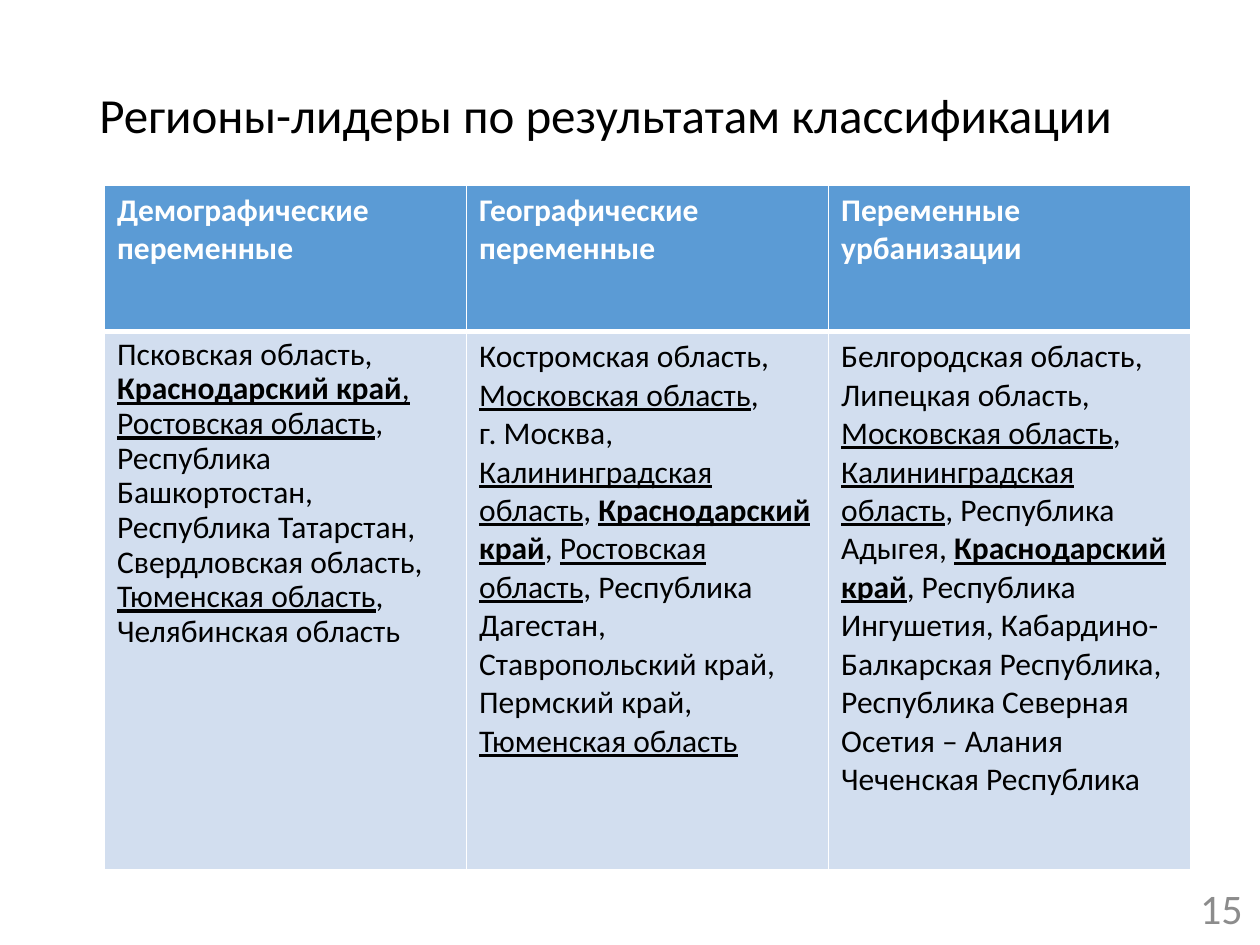
from typing import NamedTuple

from lxml import etree
from pptx import Presentation
from pptx import util as u
from pptx.dml import color
from pptx.enum import text
from pptx.oxml import ns

FONT = "Calibri"
BLACK, WHITE, GREY = "000000", "FFFFFF", "8C8C8C"
BLUE, PALE = "5B9BD5", "D2DEEF"


class Run(NamedTuple):
    words: str
    bold: bool = False
    line: bool = False


class Box(NamedTuple):
    words: str
    area: tuple
    size: int
    tint: str
    form: dict


class Column(NamedTuple):
    head: str
    body: list
    form: dict


def rgb(tint: str) -> color.RGBColor:
    return color.RGBColor.from_string(tint)


def apply(item, form: dict) -> None:
    for name, value in form.items():
        setattr(item, name, value)


def under(words: str) -> Run:
    return Run(words, line=True)


def strong(words: str) -> Run:
    return Run(words, bold=True, line=True)


def write(frame, paras: list, size: int, tint: str, form: dict) -> None:
    """Fill a text frame with paragraphs, each a list of runs."""
    frame.word_wrap = True
    for i, runs in enumerate(paras):
        para = frame.add_paragraph() if i else frame.paragraphs[0]
        apply(para, form)
        for run in runs:
            part = para.add_run()
            part.text = run.words
            apply(part.font, {"name": FONT, "size": u.Pt(size),
                              "bold": run.bold, "underline": run.line})
            part.font.color.rgb = rgb(tint)


def label(slide, box: Box) -> None:
    frame = slide.shapes.add_textbox(*map(u.Inches, box.area)).text_frame
    frame.vertical_anchor = text.MSO_ANCHOR.MIDDLE
    write(frame, [[Run(box.words)]], box.size, box.tint, box.form)


def border(cell, widths: dict) -> None:
    props = cell._tc.get_or_add_tcPr()
    for side, width in widths.items():
        edge = etree.SubElement(props, ns.qn(f"a:ln{side}"), w=str(u.Pt(width)))
        fill = etree.SubElement(edge, ns.qn("a:solidFill"))
        etree.SubElement(fill, ns.qn("a:srgbClr"), val=WHITE)


def paint(cell, fill: str, widths: dict) -> None:
    border(cell, widths)
    cell.fill.solid()
    cell.fill.fore_color.rgb = rgb(fill)


def grid(slide, cols: list) -> None:
    area = map(u.Inches, (0.83, 1.47, 8.62, 5.43))
    table = slide.shapes.add_table(2, len(cols), *area).table
    for row, high in zip(table.rows, (1.16, 4.27)):
        row.height = u.Inches(high)
    for i, col in enumerate(cols):
        head, body = table.cell(0, i), table.cell(1, i)
        paint(head, BLUE, {"L": 1, "R": 1, "T": 1, "B": 3})
        paint(body, PALE, {"L": 1, "R": 1, "T": 3, "B": 1})
        write(head.text_frame, [[Run(col.head, bold=True)]], 18, WHITE, {})
        write(body.text_frame, col.body, 18, BLACK, col.form)


# Labels
LABELS = [
    Box("Регионы-лидеры по результатам классификации",
        (0.69, 0.4, 8.62, 1.07), 28, BLACK, {"line_spacing": 0.9}),
    Box("15", (9.02, 6.98, 0.94, 0.45), 24, GREY,
        {"alignment": text.PP_ALIGN.RIGHT}),
]

# Table columns
COLUMNS = [
    Column("Демографические переменные", [
        [Run("Псковская область, "), strong("Краснодарский край"),
         under(", Ростовская область"),
         Run(", Республика Башкортостан, Республика Татарстан, "
             "Свердловская область, "),
         under("Тюменская область"), Run(", Челябинская область")],
    ], {"line_spacing": 0.9, "space_before": u.Pt(7.5)}),
    Column("Географические переменные", [
        [Run("Костромская область, "), under("Московская область"), Run(",")],
        [Run("г. Москва,")],
        [under("Калининградская область"), Run(", "),
         strong("Краснодарский край"), Run(", "),
         under("Ростовская область"),
         Run(", Республика Дагестан, Ставропольский край, Пермский край,")],
        [under("Тюменская область")],
    ], {}),
    Column("Переменные урбанизации", [
        [Run("Белгородская область, Липецкая область,")],
        [under("Московская область"), Run(", "),
         under("Калининградская область"), Run(", Республика Адыгея, "),
         strong("Краснодарский край"),
         Run(", Республика Ингушетия, Кабардино-Балкарская Республика,")],
        [Run("Республика Северная Осетия – Алания")],
        [Run("Чеченская Республика")],
    ], {}),
]


def main() -> None:
    deck = Presentation()
    apply(deck, {"slide_width": u.Inches(10), "slide_height": u.Inches(7.5)})
    slide = deck.slides.add_slide(deck.slide_layouts[6])
    for box in LABELS:
        label(slide, box)
    grid(slide, COLUMNS)
    deck.save("out.pptx")


if __name__ == "__main__":
    main()
